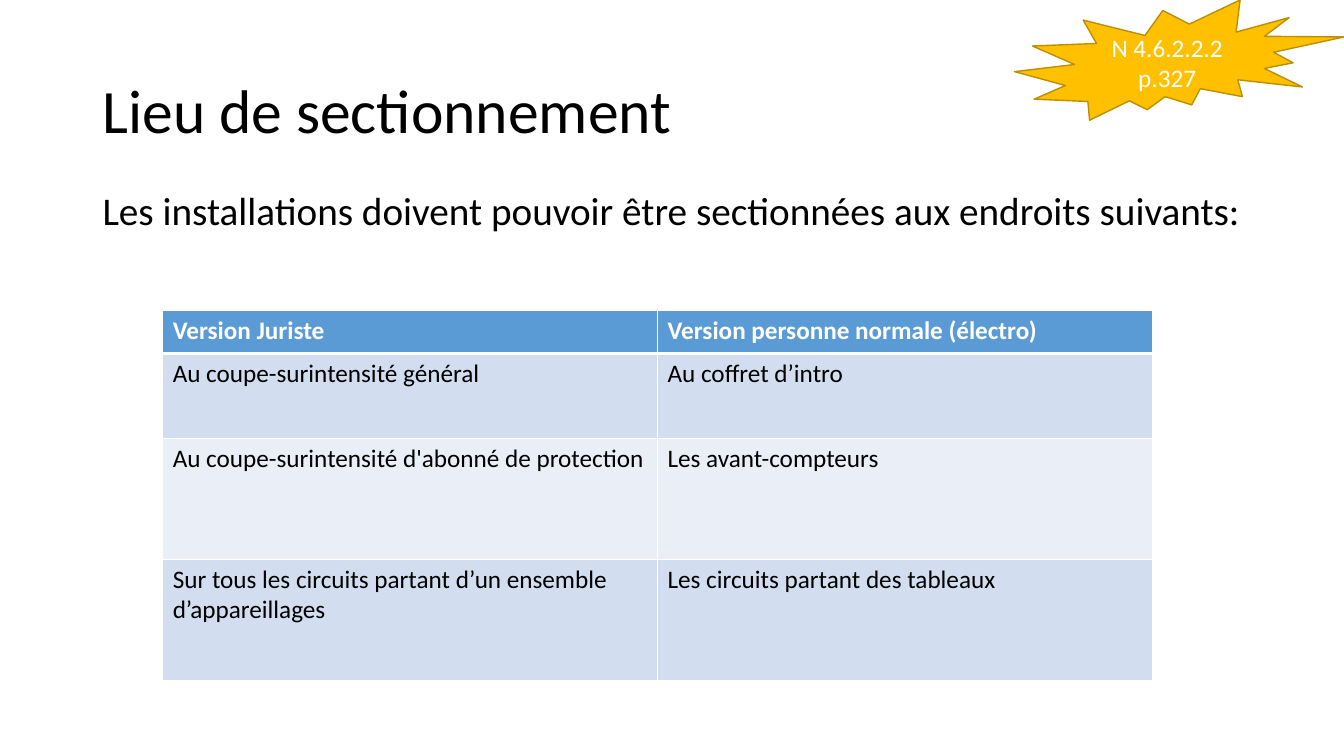
from dataclasses import dataclass

import pptx
import pptx.dml.color
import pptx.enum.shapes
import pptx.enum.text
import pptx.oxml
import pptx.oxml.ns
import pptx.util
from pptx.util import Cm

FONT = "Calibri"
BLACK, WHITE = "000000", "FFFFFF"
HEADER_BLUE, BAND_DARK, BAND_LIGHT = "5B9BD5", "D2DEEF", "EAEFF7"
GOLD, DARK_GOLD = "FFC000", "BD8E00"
THIN, THICK = 1, 3


@dataclass
class TableRow:
    legal: str
    plain: str
    height: float
    fill: str
    color: str = BLACK
    bold: bool = False
    top: float = THIN
    bottom: float = THIN


ROWS = [
    TableRow("Version Juriste", "Version personne normale (électro)", 1.09,
             HEADER_BLUE, WHITE, bold=True, bottom=THICK),
    TableRow("Au coupe-surintensité général", "Au coffret d’intro", 2.13,
             BAND_DARK, top=THICK),
    TableRow("Au coupe-surintensité d'abonné de protection", "Les avant-compteurs",
             3.05, BAND_LIGHT),
    TableRow("Sur tous les circuits partant d’un ensemble d’appareillages",
             "Les circuits partant des tableaux", 3.05, BAND_DARK),
]


def rgb(color: str) -> pptx.dml.color.RGBColor:
    return pptx.dml.color.RGBColor.from_string(color)


def add_span(para, text: str, size: float, color: str, bold: bool = False) -> None:
    span = para.add_run()
    span.text = text
    span.font.name = FONT
    span.font.size = pptx.util.Pt(size)
    span.font.bold = bold
    span.font.color.rgb = rgb(color)


def fill_placeholder(box, top: float, height: float, text: str, size: float, anchor):
    """Place a template placeholder and return its paragraph."""
    box.left, box.top, box.width, box.height = Cm(2.33), Cm(top), Cm(29.21), Cm(height)
    box.text_frame.vertical_anchor = anchor
    para = box.text_frame.paragraphs[0]
    para.alignment = pptx.enum.text.PP_ALIGN.LEFT
    para.line_spacing = 0.9
    add_span(para, text, size, BLACK)
    return para


def remove_bullet(para) -> None:
    properties = para._p.get_or_add_pPr()
    properties.set("marL", "0")
    properties.set("indent", "0")
    properties.append(pptx.oxml.parse_xml(
        f"<a:buNone {pptx.oxml.ns.nsdecls('a')}/>"))


def add_border(cell, side: str, width: float) -> None:
    cell._tc.get_or_add_tcPr().append(pptx.oxml.parse_xml(
        f'<a:ln{side} {pptx.oxml.ns.nsdecls("a")} w="{pptx.util.Pt(width)}">'
        f'<a:solidFill><a:srgbClr val="{WHITE}"/></a:solidFill></a:ln{side}>'))


def add_versions_table(page) -> None:
    frame = page.shapes.add_table(len(ROWS), 2, Cm(4.1), Cm(7.82), Cm(24.94),
                                  Cm(sum(row.height for row in ROWS)))
    for index, row in enumerate(ROWS):
        frame.table.rows[index].height = Cm(row.height)
        for column, text in enumerate((row.legal, row.plain)):
            cell = frame.table.cell(index, column)
            borders = {"L": THIN, "R": THIN, "T": row.top, "B": row.bottom}
            for side, width in borders.items():
                add_border(cell, side, width)
            cell.fill.solid()
            cell.fill.fore_color.rgb = rgb(row.fill)
            add_span(cell.text_frame.paragraphs[0], text, 18, row.color, row.bold)


def add_reference_burst(page) -> None:
    burst = page.shapes.add_shape(pptx.enum.shapes.MSO_SHAPE.EXPLOSION2,
                                  Cm(25.57), Cm(0), Cm(8.3), Cm(3.03))
    burst.shadow.inherit = False
    burst.fill.solid()
    burst.fill.fore_color.rgb = rgb(GOLD)
    burst.line.color.rgb = rgb(DARK_GOLD)
    burst.line.width = pptx.util.Pt(1)
    burst.text_frame.word_wrap = True
    burst.text_frame.vertical_anchor = pptx.enum.text.MSO_ANCHOR.MIDDLE
    para = burst.text_frame.paragraphs[0]
    para.alignment = pptx.enum.text.PP_ALIGN.CENTER
    add_span(para, "N 4.6.2.2.2 p.327", 18, WHITE)


def main() -> None:
    deck = pptx.Presentation()
    deck.slide_width, deck.slide_height = Cm(33.87), Cm(19.05)
    page = deck.slides.add_slide(deck.slide_layouts[1])
    fill_placeholder(page.shapes.title, 1.01, 3.68, "Lieu de sectionnement", 44,
                     pptx.enum.text.MSO_ANCHOR.MIDDLE)
    intro = fill_placeholder(
        page.placeholders[1], 4.69, 12.47,
        "Les installations doivent pouvoir être sectionnées aux endroits suivants:",
        28, pptx.enum.text.MSO_ANCHOR.TOP)
    intro.space_before = pptx.util.Pt(10)
    remove_bullet(intro)
    add_versions_table(page)
    add_reference_burst(page)
    deck.save("out.pptx")


if __name__ == "__main__":
    main()
